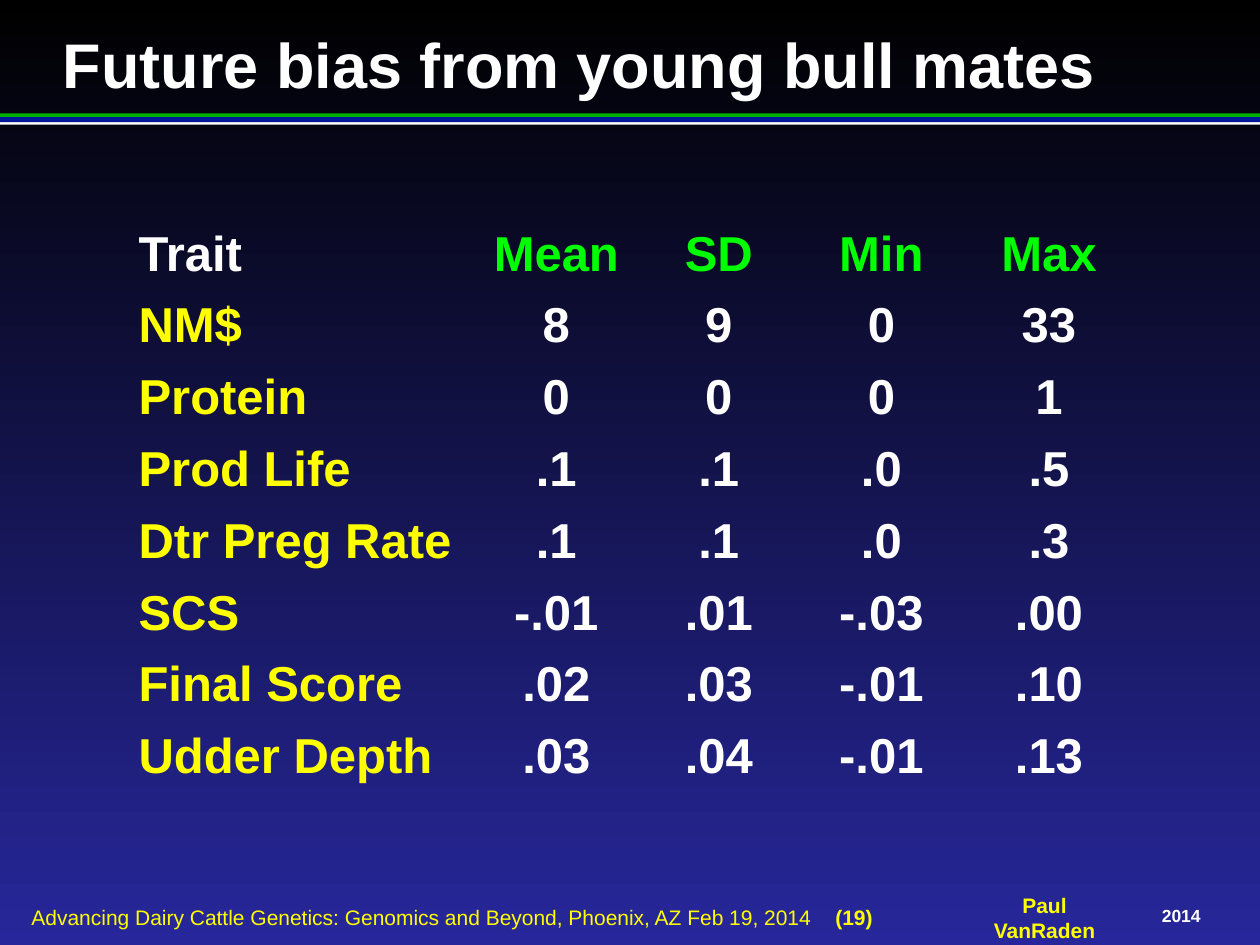
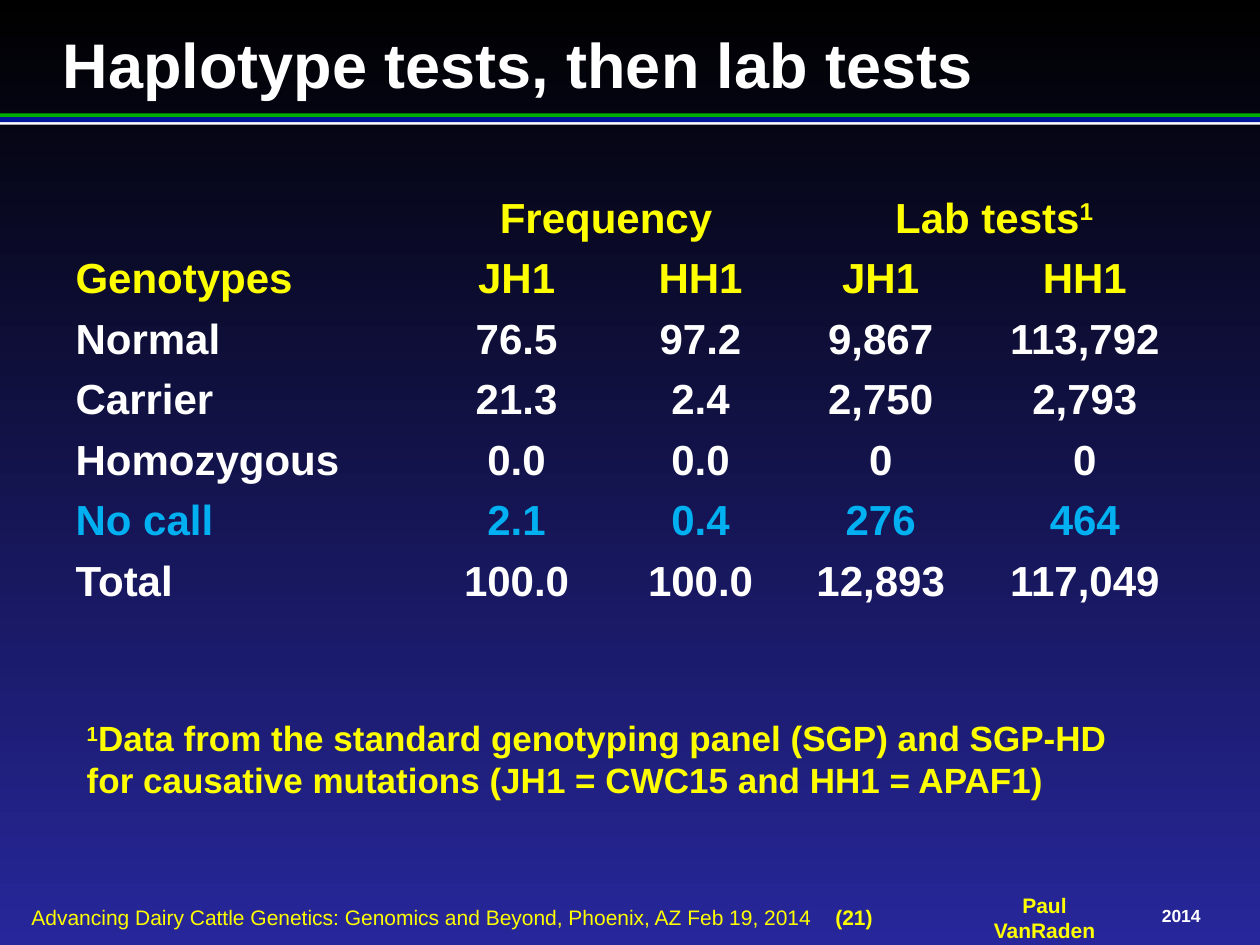
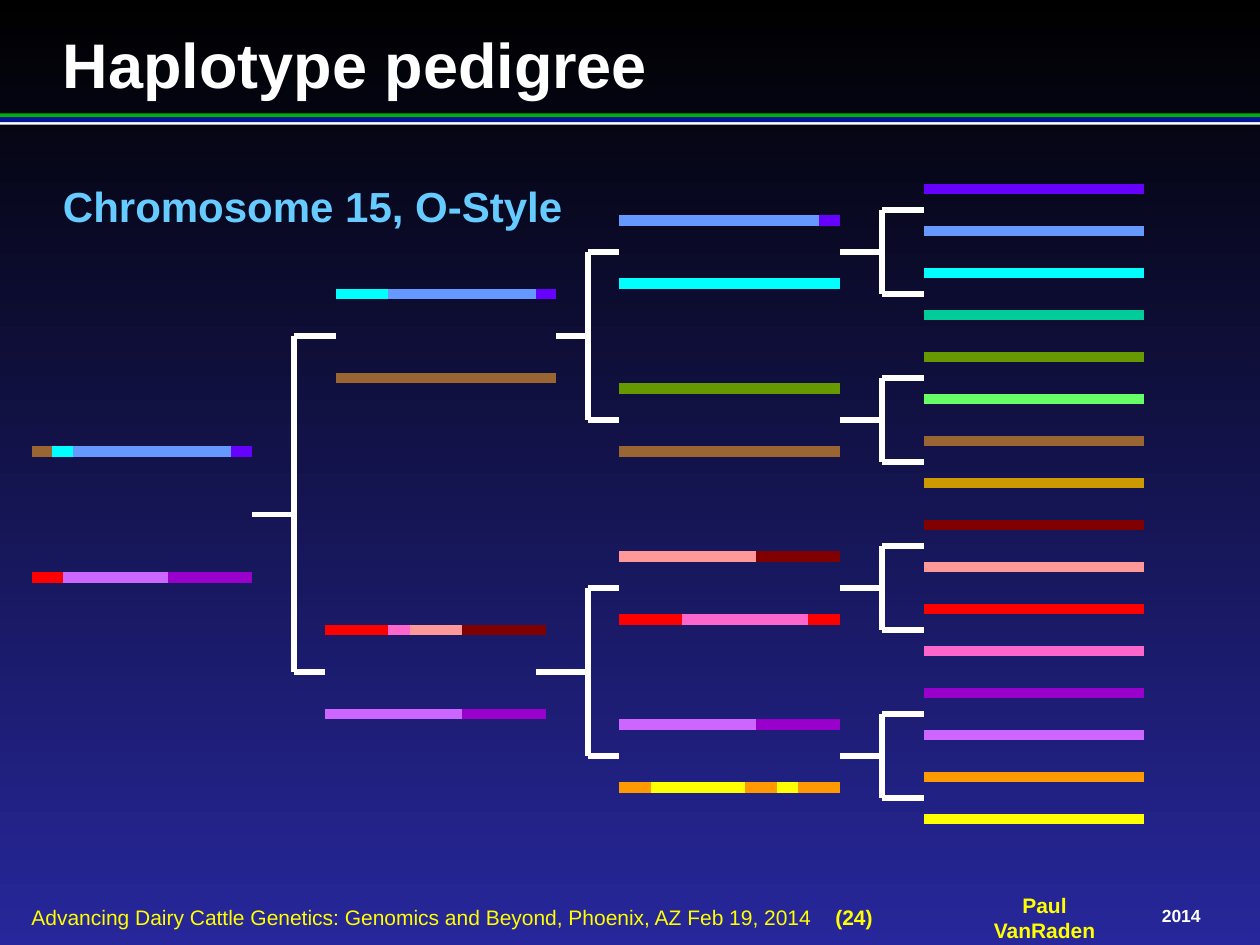
from dataclasses import dataclass

from lxml import etree
from pptx import Presentation
from pptx import util as u
from pptx.dml.color import RGBColor
from pptx.enum import shapes, text
from pptx.oxml import ns


@dataclass(frozen=True)
class Theme:
    font: str = "Arial"
    title_size: int = 36
    large_size: int = 28
    medium_size: int = 24
    note_size: int = 20
    footer_size: int = 12
    year_size: int = 10
    bracket_width: int = 3
    chromosome_width: int = 6
    white: str = "FFFFFF"
    yellow: str = "FFFF00"
    green: str = "00FF00"
    highlight: str = "00B0F0"
    subtitle: str = "66CCFF"
    background_top: str = "000000"
    background_bottom: str = "27279B"
    band_green: str = "01AF00"
    band_blue: str = "001799"
    plain_table: str = "{2D5ABB26-0587-4C30-8999-92F81FD0307C}"


HAPLOTYPES = {
    "violet": "6600FF", "blue": "6699FF", "cyan": "00FFFF", "teal": "00CC99",
    "olive": "669900", "lime": "66FF66", "brown": "996633", "gold": "CC9900",
    "maroon": "800000", "salmon": "FF9999", "red": "FF0000", "pink": "FF66CC",
    "purple": "9900CC", "lilac": "CC66FF", "orange": "FF9900", "yellow": "FFFF00",
}
CENTER = text.PP_ALIGN.CENTER
LEFT = text.PP_ALIGN.LEFT
MIDDLE = text.MSO_ANCHOR.MIDDLE
TOP = text.MSO_ANCHOR.TOP


class Deck:
    def __init__(self, theme):
        self.theme = theme
        self.presentation = Presentation()
        self.presentation.slide_width = u.Inches(10)
        self.presentation.slide_height = u.Inches(7.5)
        self.slide = None

    def new_slide(self, title, number):
        theme = self.theme
        self.slide = self.presentation.slides.add_slide(self.presentation.slide_layouts[6])
        fill = self.slide.background.fill
        fill.gradient()
        fill.gradient_angle = 270
        colours = (theme.background_top, theme.background_bottom)
        for stop, position, colour in zip(fill.gradient_stops, (0, 1), colours):
            stop.position = position
            stop.color.rgb = RGBColor.from_string(colour)
        self.band(0.9, 0.03, theme.band_green)
        self.band(0.96, 0.03, theme.white)
        self.band(0.93, 0.04, theme.band_blue)
        self.footer(number)
        paragraph = self.text_box(0.5, 0.2, 9, 0.6)
        self.run(paragraph, title, theme.title_size, theme.white)

    def band(self, top, height, colour):
        band = self.slide.shapes.add_shape(
            shapes.MSO_SHAPE.RECTANGLE, 0, u.Inches(top), u.Inches(10), u.Inches(height))
        band.shadow.inherit = False
        band.fill.solid()
        band.fill.fore_color.rgb = RGBColor.from_string(colour)
        band.line.fill.background()

    def footer(self, number):
        theme = self.theme
        author = self.text_box(7.69, 7.18, 1.2, 0.2, MIDDLE, CENTER)
        self.run(author, "Paul VanRaden", theme.footer_size, theme.yellow)
        year = self.text_box(9.07, 7.18, 0.61, 0.17, MIDDLE, CENTER)
        self.run(year, "2014", theme.year_size, theme.white)
        event = self.text_box(0.25, 7.18, 6.8, 0.2, MIDDLE)
        tabs = etree.SubElement(event._p.get_or_add_pPr(), ns.qn("a:tabLst"))
        etree.SubElement(tabs, ns.qn("a:tab"), pos=str(u.Inches(6.38)), algn="l")
        self.run(event, "Advancing Dairy Cattle Genetics: Genomics and Beyond, "
                 "Phoenix, AZ Feb 19, 2014\t", theme.footer_size, theme.yellow, bold=False)
        self.run(event, f"({number})", theme.footer_size, theme.yellow)

    def text_box(self, left, top, width, height, anchor=TOP, align=LEFT, inset=(0, 0)):
        box = self.slide.shapes.add_textbox(*map(u.Inches, (left, top, width, height)))
        frame = box.text_frame
        frame.word_wrap = True
        frame.vertical_anchor = anchor
        frame.margin_left = frame.margin_right = u.Inches(inset[0])
        frame.margin_top = frame.margin_bottom = u.Inches(inset[1])
        paragraph = frame.paragraphs[0]
        paragraph.alignment = align
        return paragraph

    def run(self, paragraph, words, size, colour, bold=True, superscript=False):
        run = paragraph.add_run()
        run.text = words
        run.font.name = self.theme.font
        run.font.size = u.Pt(size)
        run.font.bold = bold
        run.font.color.rgb = RGBColor.from_string(colour)
        if superscript:
            run.font._element.set("baseline", "30000")

    def table(self, left, top, widths, row_height, rows, size, colour_of):
        frame = self.slide.shapes.add_table(
            len(rows), len(widths), u.Inches(left), u.Inches(top),
            u.Inches(sum(widths)), u.Inches(row_height * len(rows)))
        table = frame.table
        table.first_row = table.horz_banding = False
        table._tbl.tblPr.find(ns.qn("a:tableStyleId")).text = self.theme.plain_table
        for column, width in zip(table.columns, widths):
            column.width = u.Inches(width)
        for row_index, values in enumerate(rows):
            table.rows[row_index].height = u.Inches(row_height)
            for column_index, value in enumerate(values):
                cell = table.cell(row_index, column_index)
                cell.fill.background()
                cell.margin_top = u.Inches(0.05)
                cell.margin_bottom = u.Inches(0.03)
                paragraph = cell.text_frame.paragraphs[0]
                paragraph.alignment = CENTER if column_index else LEFT
                if value:
                    self.run(paragraph, value, size, colour_of(row_index, column_index))
        return table

    def line(self, start, end, colour, width):
        points = [u.Inches(twelfths / 12) for twelfths in (*start, *end)]
        line = self.slide.shapes.add_connector(shapes.MSO_CONNECTOR.STRAIGHT, *points)
        line.line.color.rgb = RGBColor.from_string(colour)
        line.line.width = u.Pt(width)
        etree.SubElement(line._element.spPr, ns.qn("a:effectLst"))

    def chromosome(self, left, y, segments):
        for name, right in segments:
            self.line((left, y), (right, y), HAPLOTYPES[name], self.theme.chromosome_width)
            left = right

    def bracket(self, stem, spine, middle, top, bottom):
        strokes = [
            ((spine, top[1]), top),
            ((spine, bottom[1]), bottom),
            ((spine, top[1]), (spine, bottom[1])),
            ((stem, middle), (spine, middle)),
        ]
        for start, end in strokes:
            self.line(start, end, self.theme.white, self.theme.bracket_width)


def bias_slide(deck):
    theme = deck.theme
    deck.new_slide("Future bias from young bull mates", 19)
    rows = [
        ("Trait", "Mean", "SD", "Min", "Max"),
        ("NM$", "8", "9", "0", "33"),
        ("Protein", "0", "0", "0", "1"),
        ("Prod Life", ".1", ".1", ".0", ".5"),
        ("Dtr Preg Rate", ".1", ".1", ".0", ".3"),
        ("SCS", "-.01", ".01", "-.03", ".00"),
        ("Final Score", ".02", ".03", "-.01", ".10"),
        ("Udder Depth", ".03", ".04", "-.01", ".13"),
    ]

    def colour_of(row, column):
        if row == 0:
            return theme.green if column else theme.white
        return theme.white if column else theme.yellow

    deck.table(1, 1.75, (2.75, 1.33, 1.25, 1.33, 1.33), 0.57, rows,
               theme.large_size, colour_of)


def lab_test_slide(deck):
    theme = deck.theme
    deck.new_slide("Haplotype tests, then lab tests", 21)
    rows = [
        ("", "Frequency", "", "Lab tests", ""),
        ("Genotypes", "JH1", "HH1", "JH1", "HH1"),
        ("Normal", "76.5", "97.2", "9,867", "113,792"),
        ("Carrier", "21.3", "2.4", "2,750", "2,793"),
        ("Homozygous", "0.0", "0.0", "0", "0"),
        ("No call", "2.1", "0.4", "276", "464"),
        ("Total", "100.0", "100.0", "12,893", "117,049"),
    ]
    row_colours = {0: theme.yellow, 1: theme.yellow, 5: theme.highlight}
    table = deck.table(0.5, 1.5, (2.85, 1.5, 1.42, 1.44, 1.8), 0.47, rows, theme.medium_size,
                       lambda row, column: row_colours.get(row, theme.white))
    for column in (1, 3):
        table.cell(0, column).merge(table.cell(0, column + 1))
    deck.run(table.cell(0, 3).text_frame.paragraphs[0], "1", theme.medium_size,
             theme.yellow, superscript=True)
    note = deck.text_box(0.59, 5.64, 8.66, 0.77, inset=(0.1, 0.05))
    deck.run(note, "1", theme.note_size, theme.yellow, superscript=True)
    deck.run(note, "Data from the standard genotyping panel (SGP) and SGP-HD for causative "
             "mutations (JH1 = CWC15 and HH1 = APAF1)", theme.note_size, theme.yellow)


def pedigree_slide(deck):
    theme = deck.theme
    deck.new_slide("Haplotype pedigree", 24)
    subtitle = deck.text_box(0.5, 1.43, 4.2, 0.39)
    deck.run(subtitle, "Chromosome 15, O-Style", theme.medium_size, theme.subtitle)

    deck.bracket(24, 28, 49, (32, 32), (31, 64))
    for stem, middle in ((53, 32), (51, 64)):
        deck.bracket(stem, 56, middle, (59, middle - 8), (59, middle + 8))
    for middle in range(24, 73, 16):
        deck.bracket(80, 84, middle, (88, middle - 4), (88, middle + 4))

    descendants = [
        (3, 43, [("brown", 5), ("cyan", 7), ("blue", 22), ("violet", 24)]),
        (3, 55, [("red", 6), ("lilac", 16), ("purple", 24)]),
        (32, 28, [("cyan", 37), ("blue", 51), ("violet", 53)]),
        (32, 36, [("brown", 53)]),
        (31, 60, [("red", 37), ("pink", 39), ("salmon", 44), ("maroon", 52)]),
        (31, 68, [("lilac", 44), ("purple", 52)]),
        (59, 21, [("blue", 78), ("violet", 80)]),
        (59, 27, [("cyan", 80)]),
        (59, 37, [("olive", 80)]),
        (59, 43, [("brown", 80)]),
        (59, 53, [("salmon", 72), ("maroon", 80)]),
        (59, 59, [("red", 65), ("pink", 77), ("red", 80)]),
        (59, 69, [("lilac", 72), ("purple", 80)]),
        (59, 75, [("orange", 62), ("yellow", 71), ("orange", 74), ("yellow", 76),
                  ("orange", 80)]),
    ]
    for left, y, segments in descendants:
        deck.chromosome(left, y, segments)
    for index, name in enumerate(HAPLOTYPES):
        deck.chromosome(88, 18 + 4 * index, [(name, 109)])


def main():
    deck = Deck(Theme())
    bias_slide(deck)
    lab_test_slide(deck)
    pedigree_slide(deck)
    deck.presentation.save("out.pptx")


if __name__ == "__main__":
    main()
